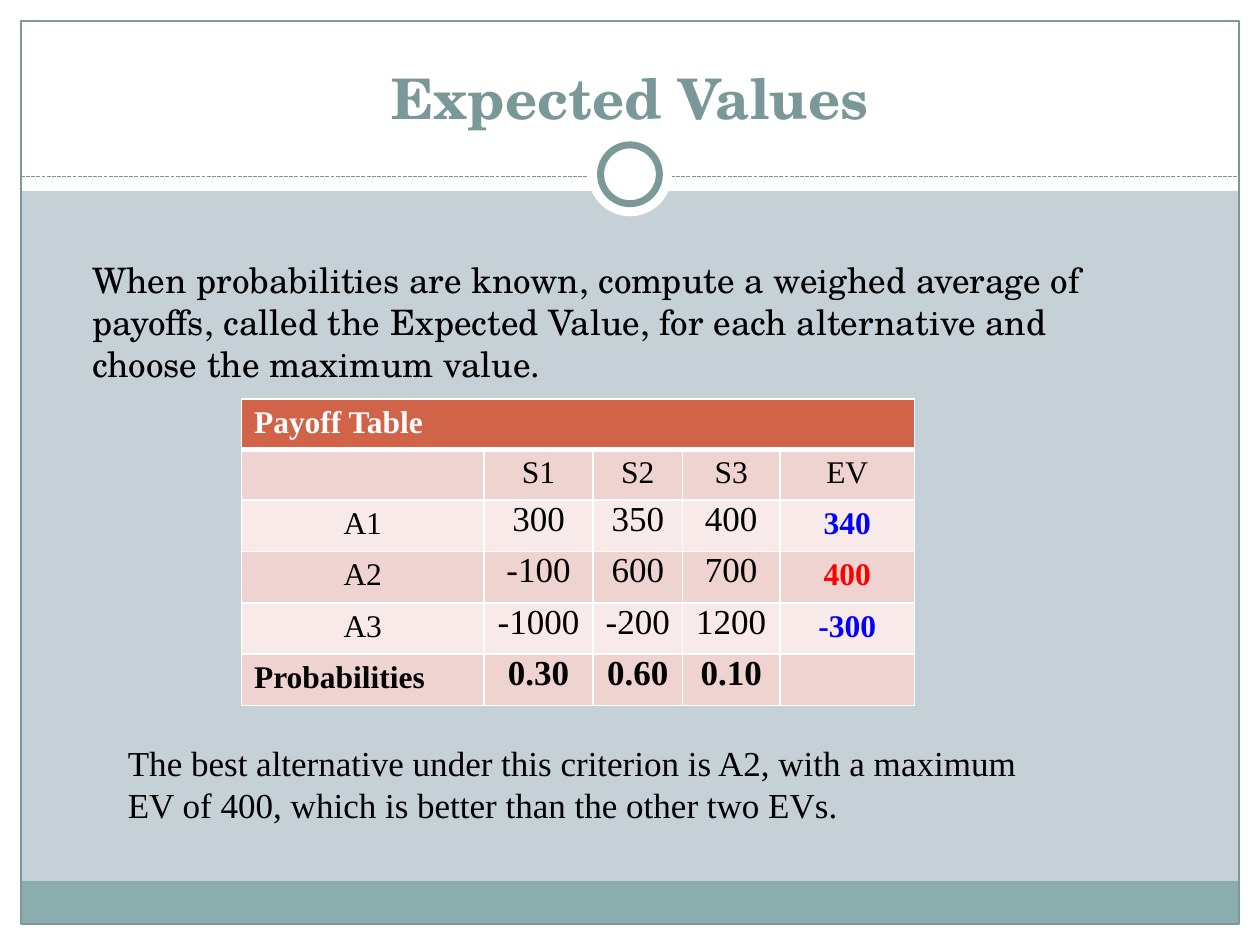
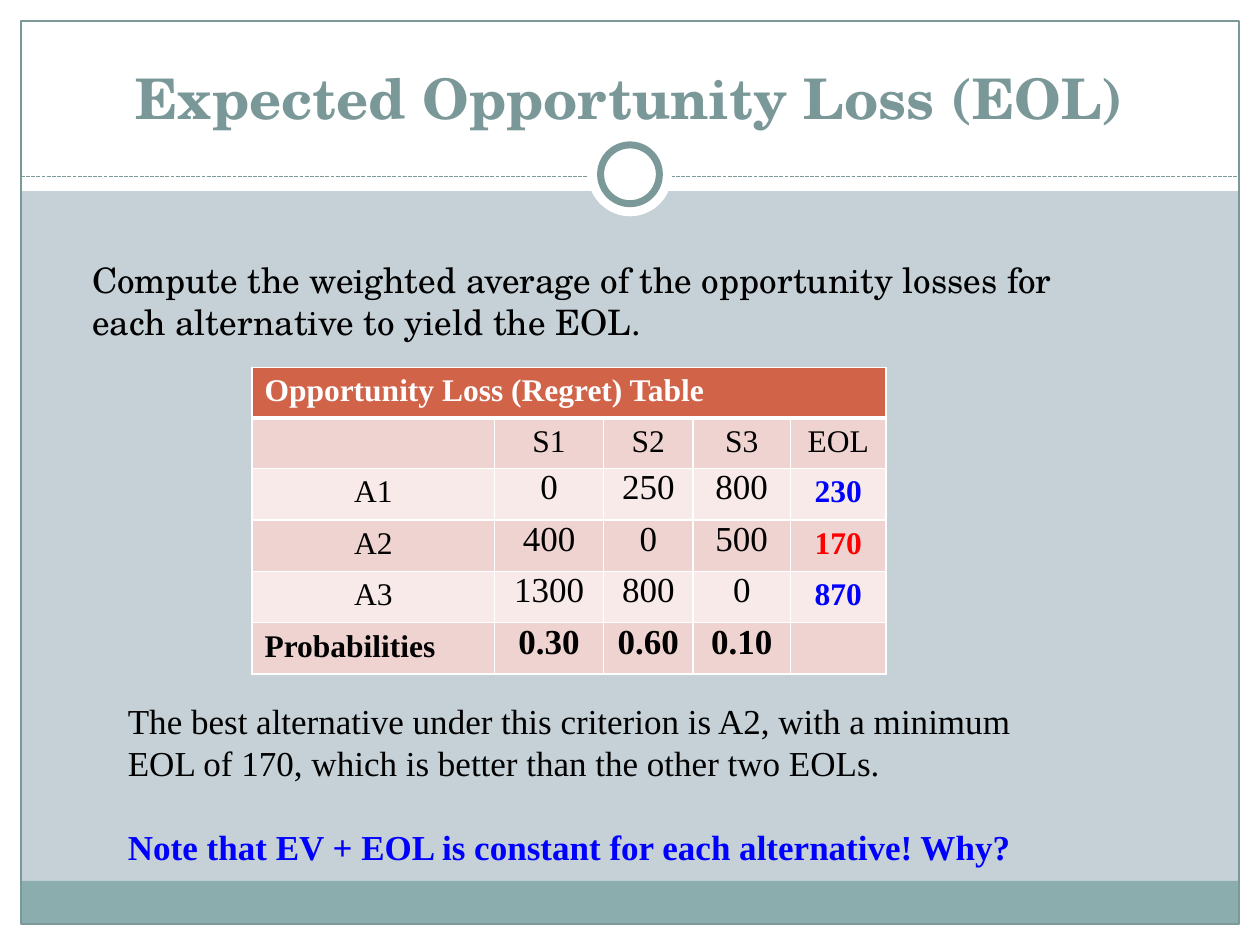
from dataclasses import dataclass
from lxml.etree import SubElement
from pptx import Presentation
from pptx.dml.color import RGBColor
from pptx.enum.dml import MSO_LINE
from pptx.enum.shapes import MSO_CONNECTOR, MSO_SHAPE
from pptx.enum.text import MSO_ANCHOR, PP_ALIGN
from pptx.oxml.ns import qn
from pptx.util import Inches, Pt


@dataclass(frozen=True)
class Theme:
    background: str = "C5D1D7"
    white: str = "FFFFFF"
    black: str = "000000"
    title: str = "7B9899"
    rule: str = "7C999A"
    footer: str = "8CADAE"
    header: str = "D16349"
    row_dark: str = "EED3D0"
    row_light: str = "F7EAE9"
    blue: str = "0000FF"
    red: str = "FF0000"
    heading_font: str = "TeX Gyre Schola"
    text_font: str = "Times New Roman"
    title_size: int = 32
    body_size: int = 20
    label_size: int = 18
    line_pitch: int = 24


THEME = Theme()
WIDTH, HEIGHT = Inches(10), Inches(7.5)
COLUMNS, ROWS = 60, 45
TABLE_ROWS = [2.4, 2.4, 2.45, 2.45, 2.45, 2.45]
STATE_COLUMNS = [11.55, 5.2, 4.25, 4.65]
PROBABILITIES = ["Probabilities", "0.30", "0.60", "0.10", ""]


def across(columns):
    return round(WIDTH * columns / COLUMNS)


def down(rows):
    return round(HEIGHT * rows / ROWS)


def area(left, top, width, height):
    return across(left), down(top), across(width), down(height)


def rgb(color):
    return RGBColor.from_string(color)


def write(para, text, size=THEME.body_size, font=THEME.text_font,
          color=THEME.black, bold=False, align=PP_ALIGN.LEFT,
          before=0, pitch=None):
    para.alignment = align
    para.space_before = Pt(before)
    if pitch:
        para.line_spacing = Pt(pitch)
    span = para.add_run()
    span.text = text
    span.font.size = Pt(size)
    span.font.name = font
    span.font.bold = bold
    span.font.color.rgb = rgb(color)


def add_box(page, place, anchor=MSO_ANCHOR.TOP):
    frame = page.shapes.add_textbox(*area(*place)).text_frame
    frame.word_wrap = True
    frame.vertical_anchor = anchor
    return frame


def add_shape(page, kind, place, fill=None, line=None, weight=0.75):
    shape = page.shapes.add_shape(kind, *area(*place))
    shape.shadow.inherit = False
    if fill:
        shape.fill.solid()
        shape.fill.fore_color.rgb = rgb(fill)
    else:
        shape.fill.background()
    if line:
        shape.line.color.rgb = rgb(line)
        shape.line.width = Pt(weight)
    else:
        shape.line.fill.background()


def add_dashed_rule(page, row):
    rule = page.shapes.add_connector(
        MSO_CONNECTOR.STRAIGHT, across(1), down(row), across(59), down(row))
    rule.line.color.rgb = rgb(THEME.rule)
    rule.line.width = Pt(0.75)
    rule.line.dash_style = MSO_LINE.SQUARE_DOT
    SubElement(rule._element.spPr, qn("a:effectLst"))


def add_page(deck, title):
    page = deck.slides.add_slide(deck.slide_layouts[6])
    page.background.fill.solid()
    page.background.fill.fore_color.rgb = rgb(THEME.background)
    margins = [(0, 44, 60, 1), (0, 0, 60, 9.1), (0, 0, 1, 45), (59, 0, 1, 45)]
    for place in margins:
        add_shape(page, MSO_SHAPE.RECTANGLE, place, THEME.white)
    add_shape(page, MSO_SHAPE.RECTANGLE, (1, 41.95, 58, 2.05), THEME.footer)
    add_shape(page, MSO_SHAPE.RECTANGLE, (1, 1, 58, 43), line=THEME.rule)
    add_dashed_rule(page, 8.4)
    add_shape(page, MSO_SHAPE.OVAL, (28, 6.3, 4, 4), THEME.white)
    add_shape(page, MSO_SHAPE.OVAL, (28.6, 6.9, 2.8, 2.8),
              THEME.white, THEME.rule, 4)
    frame = add_box(page, (2, 1.5, 56, 5), MSO_ANCHOR.BOTTOM)
    write(frame.paragraphs[0], title, size=THEME.title_size,
          font=THEME.heading_font, color=THEME.title, bold=True,
          align=PP_ALIGN.CENTER)
    return page


def add_intro(page, text):
    para = add_box(page, (2, 12, 51, 6.6)).paragraphs[0]
    write(para, text, font=THEME.heading_font, before=4)
    para._p.get_or_add_pPr().set("marL", str(Inches(0.3)))


def add_conclusion(page, top, text, note=None):
    frame = add_box(page, (5.5, top, 46, 4.6))
    write(frame.paragraphs[0], text, pitch=THEME.line_pitch)
    if note:
        write(frame.add_paragraph(), note, color=THEME.blue, bold=True,
              before=THEME.line_pitch, pitch=THEME.line_pitch)


def set_borders(cell, row):
    heavy = {0: "lnB", 1: "lnT"}.get(row)
    properties = cell._tc.get_or_add_tcPr()
    for side in ("lnL", "lnR", "lnT", "lnB"):
        weight = Pt(3 if side == heavy else 1)
        border = SubElement(properties, qn(f"a:{side}"), w=str(weight))
        fill = SubElement(border, qn("a:solidFill"))
        SubElement(fill, qn("a:srgbClr"), val=THEME.white)


def cell_format(row, column, best_row):
    last_row = len(TABLE_ROWS) - 1
    if row == 0:
        return dict(size=THEME.label_size, color=THEME.white, bold=True)
    if column == 0 and row == last_row:
        return dict(size=THEME.label_size, bold=True)
    style = dict(size=THEME.label_size, align=PP_ALIGN.CENTER)
    if row > 1 and 0 < column < 4:
        style.update(size=THEME.body_size, bold=row == last_row)
    elif row > 1 and column == 4:
        color = THEME.red if row == best_row else THEME.blue
        style.update(color=color, bold=True)
    return style


def add_decision_table(page, left, top, title, measure, measure_width,
                       alternatives, best_row, inset):
    widths = STATE_COLUMNS + [measure_width]
    rows = [[title, "", "", "", ""], ["", "S1", "S2", "S3", measure],
            *alternatives, PROBABILITIES]
    place = area(left, top, sum(widths), sum(TABLE_ROWS))
    table = page.shapes.add_table(len(rows), len(widths), *place).table
    for column, width in zip(table.columns, widths):
        column.width = across(width)
    for row, height in zip(table.rows, TABLE_ROWS):
        row.height = down(height)
    for r, values in enumerate(rows):
        for c, value in enumerate(values):
            cell = table.cell(r, c)
            set_borders(cell, r)
            band = THEME.row_dark if r % 2 else THEME.row_light
            cell.fill.solid()
            cell.fill.fore_color.rgb = rgb(THEME.header if r == 0 else band)
            if r > 1 and 0 < c < 4:
                cell.margin_left = cell.margin_right = Inches(inset)
                cell.margin_top = cell.margin_bottom = 0
            write(cell.text_frame.paragraphs[0], value,
                  **cell_format(r, c, best_row))
    table.cell(0, 0).merge(table.cell(0, len(widths) - 1))


def add_expected_values(deck):
    page = add_page(deck, "Expected Values")
    add_intro(page, "When probabilities are known, compute a weighed average "
              "of payoffs, called the Expected Value, for each alternative "
              "and choose the maximum value.")
    payoffs = [["A1", "300", "350", "400", "340"],
               ["A2", "-100", "600", "700", "400"],
               ["A3", "-1000", "-200", "1200", "-300"]]
    add_decision_table(page, 11.5, 19, "Payoff Table", "EV", 6.4,
                       payoffs, best_row=3, inset=0.07)
    add_conclusion(page, 35, "The best alternative under this criterion is "
                   "A2, with a maximum EV of 400, which is better than the "
                   "other two EVs.")


def add_opportunity_loss(deck):
    page = add_page(deck, "Expected Opportunity Loss (EOL)")
    add_intro(page, "Compute the weighted average of the opportunity losses "
              "for each alternative to yield the EOL.")
    losses = [["A1", "0", "250", "800", "230"],
              ["A2", "400", "0", "500", "170"],
              ["A3", "1300", "800", "0", "870"]]
    add_decision_table(page, 12, 17.5, "Opportunity Loss (Regret) Table",
                       "EOL", 4.55, losses, best_row=3, inset=0.08)
    add_conclusion(page, 33, "The best alternative under this criterion is "
                   "A2, with a minimum EOL of 170, which is better than the "
                   "other two EOLs.",
                   "Note that EV + EOL is constant for each alternative! Why?")


def main():
    deck = Presentation()
    deck.slide_width, deck.slide_height = WIDTH, HEIGHT
    add_expected_values(deck)
    add_opportunity_loss(deck)
    deck.save("out.pptx")


if __name__ == "__main__":
    main()
